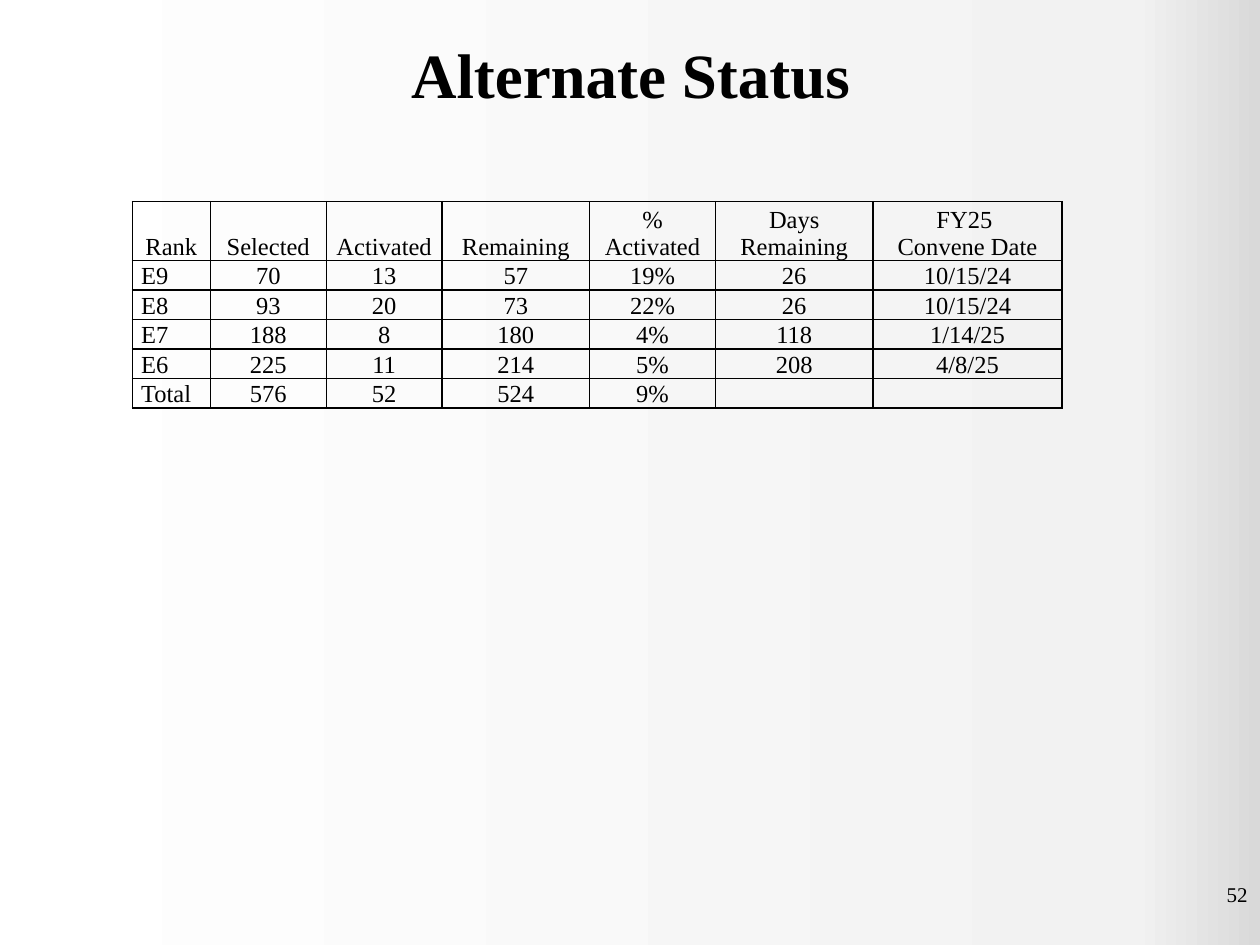
from copy import deepcopy

from lxml.etree import SubElement
from pptx import Presentation
from pptx.dml.color import RGBColor
from pptx.enum.text import MSO_ANCHOR as Anchor, PP_ALIGN as Align
from pptx.oxml.ns import qn
from pptx.util import Inches, Pt

BLACK = RGBColor(0x00, 0x00, 0x00)
WHITE = RGBColor(0xFF, 0xFF, 0xFF)
PALE_GRAY = RGBColor(0xF2, 0xF2, 0xF2)
LIGHT_GRAY = RGBColor(0xD9, 0xD9, 0xD9)

COLUMN_WIDTHS = [0.62, 0.92, 0.92, 1.17, 1, 1.25, 1.5]
ROW_HEIGHT = 0.2
STATUS_ROWS = [
    ["Rank", "Selected", "Activated", "Remaining", "% Activated",
     "Days Remaining", "FY25 \nConvene Date"],
    ["E9", "70", "13", "57", "19%", "26", "10/15/24"],
    ["E8", "93", "20", "73", "22%", "26", "10/15/24"],
    ["E7", "188", "8", "180", "4%", "118", "1/14/25"],
    ["E6", "225", "11", "214", "5%", "208", "4/8/25"],
    ["Total", "576", "52", "524", "9%", "", ""],
]


class SlideBuilder:
    font_name = "Times New Roman"
    text_color = BLACK

    def __init__(self, s):
        self.s = s

    def background(self, stops):
        fill = self.s.background.fill
        fill.gradient()
        fill.gradient_angle = 0
        stop_list = self.s._element.find(".//" + qn("a:gsLst"))
        while len(stop_list) < len(stops):
            stop_list.append(deepcopy(stop_list[-1]))
        for stop, (position, color) in zip(fill.gradient_stops, stops):
            stop.position = position
            stop.color.rgb = color

    def set_text(self, tf, text, size, align, bold=False):
        tf.text = text
        for p in tf.paragraphs:
            p.alignment = align
            for r in p.runs:
                r.font.name = self.font_name
                r.font.size = Pt(size)
                r.font.bold = bold
                r.font.color.rgb = self.text_color
            if not p.runs:
                p._p.get_or_add_endParaRPr().set("sz", str(size * 100))

    def title(self, text, left, top, width, height):
        sp = self.s.shapes.title
        sp.left, sp.top = Inches(left), Inches(top)
        sp.width, sp.height = Inches(width), Inches(height)
        tf = sp.text_frame
        tf.vertical_anchor = Anchor.MIDDLE
        self.set_text(tf, text, 36, Align.CENTER, bold=True)

    def page_number(self, text, left, top, width, height):
        sp = self.s.shapes.add_textbox(
            Inches(left), Inches(top), Inches(width), Inches(height))
        sp.text_frame.word_wrap = True
        self.set_text(sp.text_frame, text, 12, Align.RIGHT)

    def cell_borders(self, cell):
        tcPr = cell._tc.get_or_add_tcPr()
        for side in ("lnL", "lnR", "lnT", "lnB"):
            ln = SubElement(tcPr, qn(f"a:{side}"), w=str(Pt(1)))
            line_fill = SubElement(ln, qn("a:solidFill"))
            SubElement(line_fill, qn("a:srgbClr"), val=str(self.text_color))

    def table(self, rows, widths, row_height, left, top):
        table = self.s.shapes.add_table(
            len(rows), len(widths), Inches(left), Inches(top),
            Inches(sum(widths)), Inches(row_height * len(rows))).table
        table.first_row = table.horz_banding = False
        for column, width in zip(table.columns, widths):
            column.width = Inches(width)
        for i, row in enumerate(rows):
            table.rows[i].height = Inches(row_height)
            for j, text in enumerate(row):
                cell = table.cell(i, j)
                self.cell_borders(cell)
                cell.fill.background()
                cell.vertical_anchor = Anchor.BOTTOM
                cell.margin_left = cell.margin_right = Inches(0.07)
                cell.margin_top = cell.margin_bottom = 0
                align = Align.LEFT if i and not j else Align.CENTER
                self.set_text(cell.text_frame, text, 14, align)


def main():
    prs = Presentation()
    prs.slide_width, prs.slide_height = Inches(10), Inches(7.5)
    slide = SlideBuilder(prs.slides.add_slide(prs.slide_layouts[5]))
    slide.background([(0, WHITE), (0.9, PALE_GRAY), (1, LIGHT_GRAY)])
    slide.title("Alternate Status", 0.41, 0, 9.19, 1.17)
    slide.page_number("52", 7.67, 6.95, 2.33, 0.4)
    slide.table(STATUS_ROWS, COLUMN_WIDTHS, ROW_HEIGHT, 1.05, 1.6)
    prs.save("out.pptx")


if __name__ == "__main__":
    main()
